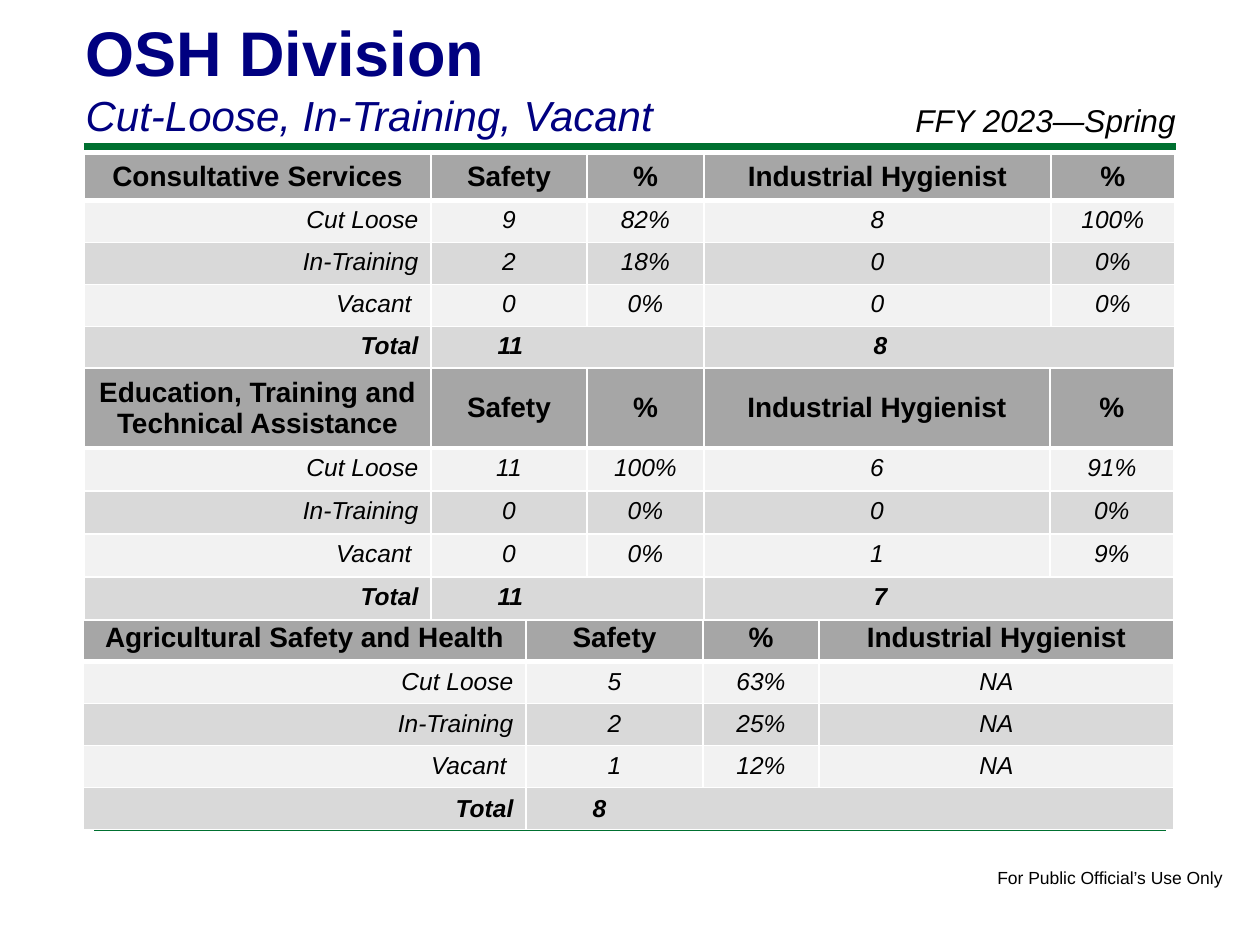
from pptx import Presentation
from pptx import util as u
from pptx.dml.color import RGBColor
from pptx.enum import shapes, text
from pptx.oxml import parse_xml
from pptx.oxml.ns import nsdecls, qn

PX = 914400 / 126
NAVY, GREEN, BLACK, WHITE = "000080", "007030", "000000", "FFFFFF"
THEME = {
    "font": "Arial",
    "head": "A6A6A6",
    "bands": ("F2F2F2", "D9D9D9"),
    "title": dict(size=36, bold=True, italic=False, color=NAVY),
    "sub": dict(size=24, bold=False, italic=True, color=NAVY),
    "term": dict(size=18, italic=True, color=BLACK),
    "foot": dict(size=10, color=BLACK),
    "label": dict(size=16, bold=True, italic=False, color=BLACK),
    "body": dict(size=14, bold=False, italic=True, color=BLACK),
    "total": dict(size=14, bold=True, italic=True, color=BLACK),
}
LEFT, MID, RIGHT = (text.PP_ALIGN.LEFT, text.PP_ALIGN.CENTER,
                    text.PP_ALIGN.RIGHT)
ANCHOR = text.MSO_ANCHOR

HEAD = ["Safety", "%", "Industrial Hygienist", "%"]
CONSULT = [
    ["Consultative Services", *HEAD],
    ["Cut Loose", "9", "82%", "8", "100%"],
    ["In-Training", "2", "18%", "0", "0%"],
    ["Vacant ", "0", "0%", "0", "0%"],
    ["Total", "11", None, "8", None],
]
TRAIN = [
    ["Education, Training and Technical Assistance", *HEAD],
    ["Cut Loose", "11", "100%", "6", "91%"],
    ["In-Training", "0", "0%", "0", "0%"],
    ["Vacant ", "0", "0%", "1", "9%"],
    ["Total", "11", None, "7", None],
]
FARM = [
    ["Agricultural Safety and Health", *HEAD[:3]],
    ["Cut Loose", "5", "63%", "NA"],
    ["In-Training", "2", "25%", "NA"],
    ["Vacant ", "1", "12%", "NA"],
    ["Total", "8", None, None],
]
# Left indent of each total, by column
INDENT = {1: 54, 3: 157}


def px(n):
    return u.Emu(round(n * PX))


def write(para, words, style, align=LEFT):
    para.alignment = align
    run = para.add_run()
    run.text = words
    run.font.name = THEME["font"]
    for key, val in THEME[style].items():
        if key == "color":
            run.font.color.rgb = RGBColor.from_string(val)
        else:
            setattr(run.font, key, u.Pt(val) if key == "size" else val)


def add_rule(slide, x, y, wide, points):
    line = slide.shapes.add_connector(
        shapes.MSO_CONNECTOR.STRAIGHT, px(x), px(y), px(x + wide), px(y))
    line.line.color.rgb = RGBColor.from_string(GREEN)
    line.line.width = u.Pt(points)
    line._element.spPr.append(parse_xml(f"<a:effectLst {nsdecls('a')}/>"))


def add_title(slide, x, y, wide, high):
    title = slide.shapes.title
    box = dict(left=x, top=y, width=wide, height=high)
    for key, val in box.items():
        setattr(title, key, px(val))
    frame = title.text_frame
    form = dict(word_wrap=True, auto_size=text.MSO_AUTO_SIZE.NONE,
                vertical_anchor=ANCHOR.BOTTOM)
    for key, val in form.items():
        setattr(frame, key, val)
    write(frame.paragraphs[0], "OSH Division", "title")
    write(frame.add_paragraph(), "Cut-Loose, In-Training, Vacant", "sub")


def add_note(slide, x, y, wide, high, words, style, wrap):
    box = slide.shapes.add_textbox(px(x), px(y), px(wide), px(high))
    box.text_frame.word_wrap = wrap
    write(box.text_frame.paragraphs[0], words, style)


def set_edges(cell, row):
    props = cell._tc.get_or_add_tcPr()
    thick = {"T": 3 if row == 1 else 1, "B": 3 if row == 0 else 1}
    for side in "LRTB":
        wide = u.Pt(thick.get(side, 1))
        props.append(parse_xml(
            f'<a:ln{side} {nsdecls("a")} w="{wide}"><a:solidFill>'
            f'<a:srgbClr val="{WHITE}"/></a:solidFill></a:ln{side}>'))


def fill_cell(cell, words, row, col, last, anchor):
    set_edges(cell, row)
    cell.fill.solid()
    shade = THEME["bands"][(row - 1) % 2] if row else THEME["head"]
    cell.fill.fore_color.rgb = RGBColor.from_string(shade)
    cell.vertical_anchor = anchor if row else ANCHOR.MIDDLE
    if words is None:
        return
    para = cell.text_frame.paragraphs[0]
    style = "total" if row == last else "body" if row else "label"
    align = MID
    if row and col == 0:
        align = RIGHT
    elif row == last:
        align = LEFT
        para._p.get_or_add_pPr().set("marL", str(px(INDENT[col])))
    write(para, words, style, align)


def add_grid(slide, x, y, cols, top, step, rows, anchor=ANCHOR.TOP):
    last = len(rows) - 1
    grid = slide.shapes.add_table(
        len(rows), len(cols), px(x), px(y), px(sum(cols)),
        px(top + step * last)).table
    for col, wide in zip(grid.columns, cols):
        col.width = px(wide)
    for i, row in enumerate(rows):
        grid.rows[i].height = px(step if i else top)
        for j, words in enumerate(row):
            fill_cell(grid.cell(i, j), words, i, j, last, anchor)
    # Each total spans the empty cells to its right
    starts = [j for j, words in enumerate(rows[last]) if j and words]
    for j, stop in zip(starts, starts[1:] + [len(cols)]):
        grid.cell(last, j).merge(grid.cell(last, stop - 1))


def main():
    deck = Presentation()
    deck.slide_width, deck.slide_height = px(1260), px(945)
    slide = deck.slides.add_slide(deck.slide_layouts[5])

    # Rules and footer
    add_rule(slide, 84, 147, 1092, 4)
    add_rule(slide, 94, 829, 1072, 2)
    add_note(slide, 985, 861, 253, 34, "For Public Official’s Use Only",
             "foot", False)

    # Heading
    add_title(slide, 73, 7, 1040, 139)

    # Staffing tables
    add_grid(slide, 84, 154, [347, 156, 117, 347, 124], 45, 42, CONSULT)
    add_grid(slide, 83, 615, [443, 177, 116, 355], 45, 42, FARM,
             ANCHOR.MIDDLE)
    add_grid(slide, 84, 368, [347, 156, 117, 346, 124], 80, 43, TRAIN)

    # Reporting term
    add_note(slide, 903, 95, 315, 50, "FFY 2023—Spring", "term", True)
    deck.save("out.pptx")


if __name__ == "__main__":
    main()
